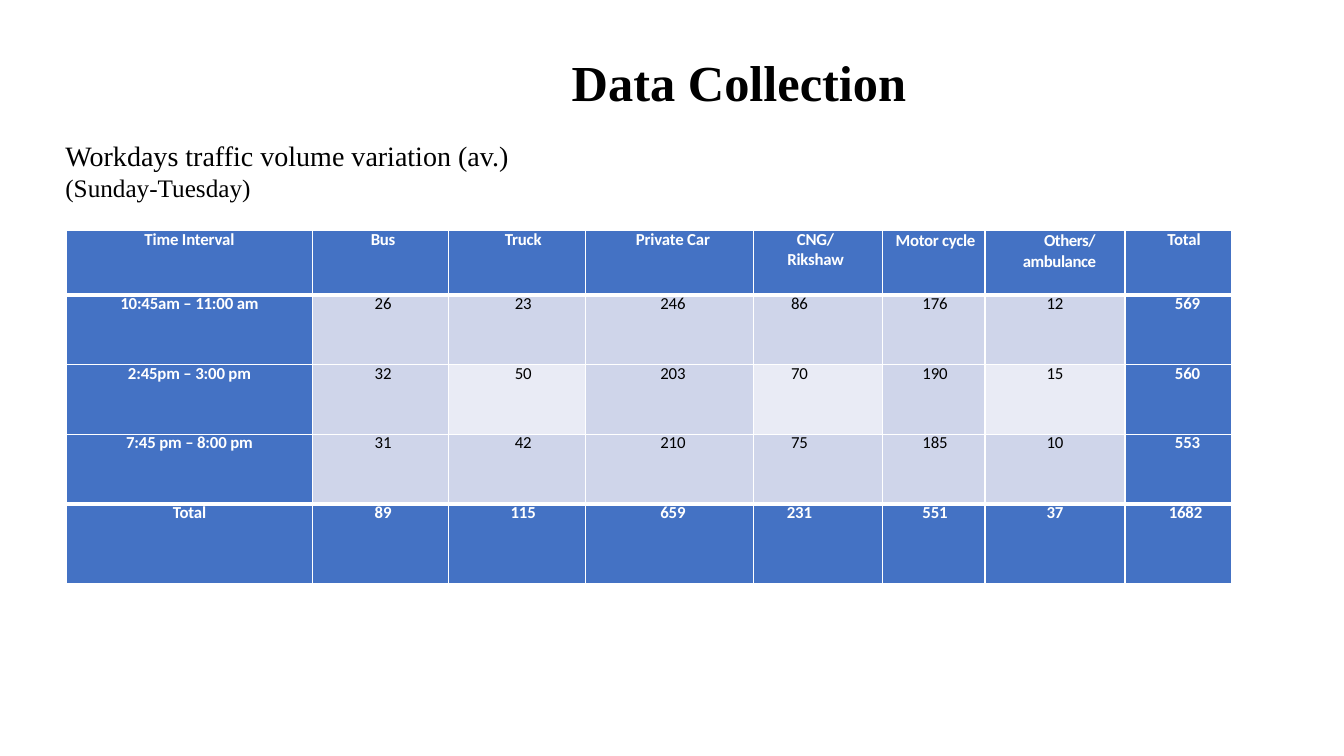
import pptx
import pptx.dml.color
import pptx.enum.text
import pptx.oxml
import pptx.oxml.ns
import pptx.util
from pptx.util import Inches

BLUE, PALE, PALER = "4472C4", "CFD5EA", "E9EBF5"
WHITE, BLACK = "FFFFFF", "000000"
SERIF, SANS = "Times New Roman", "Calibri"

COLUMNS = [2.44, 1.35, 1.36, 1.66, 1.28, 1.02, 1.39, 1.06]
ROWS = [0.64, 0.69, 0.69, 0.69, 0.79]
DATA = [
    ["Time Interval", "Bus", "Truck", "Private Car", "CNG/\nRikshaw",
     "Motor cycle", "Others/ ambulance", "Total"],
    ["10:45am – 11:00 am", "26", "23", "246", "86", "176", "12", "569"],
    ["2:45pm – 3:00 pm", "32", "50", "203", "70", "190", "15", "560"],
    ["7:45 pm – 8:00 pm", "31", "42", "210", "75", "185", "10", "553"],
    ["Total", "89", "115", "659", "231", "551", "37", "1682"],
]
HEADER_INDENTS = [(0, 0), (0.05, 0), (0.12, 0), (0.07, 0), (0.02, 0),
                  (0.17, -0.05), (0.09, 0.2), (0.11, 0)]
HEADER_RIGHT = [0, 0, 0, 0, 0.06, 0.08, 0, 0]
HEADER_TRACKING = [-10, -20, -10, -10, -15, -20, -30, -10]
BODY_INDENTS = [0, 0.05, 0.12, 0.07, 0, 0.03, 0, 0.18]
BODY_RIGHT = [0, 0, 0, 0, 0.36, 0, 0, 0]


def rgb(value):
    return pptx.dml.color.RGBColor.from_string(value)


class Deck:
    def __init__(self):
        self.prs = pptx.Presentation()
        self.prs.slide_width = Inches(13.33)
        self.prs.slide_height = Inches(7.5)
        self.slide = self.prs.slides.add_slide(self.prs.slide_layouts[5])

    def style(self, r, size, font, color, bold=False):
        r.font.size = pptx.util.Pt(size)
        r.font.name = font
        r.font.color.rgb = rgb(color)
        r.font.bold = bold

    def title(self, text, left, top, width, height):
        sp = self.slide.shapes.title
        sp.left, sp.top = Inches(left), Inches(top)
        sp.width, sp.height = Inches(width), Inches(height)
        tf = sp.text_frame
        tf.text = text
        tf.word_wrap = False
        tf.auto_size = pptx.enum.text.MSO_AUTO_SIZE.SHAPE_TO_FIT_TEXT
        tf.vertical_anchor = pptx.enum.text.MSO_ANCHOR.TOP
        p = tf.paragraphs[0]
        p.alignment = pptx.enum.text.PP_ALIGN.LEFT
        self.style(p.runs[0], 36, SERIF, BLACK, True)

    def text(self, parts, left, top, width, height):
        sp = self.slide.shapes.add_textbox(
            Inches(left), Inches(top), Inches(width), Inches(height))
        tf = sp.text_frame
        tf.word_wrap = True
        tf.auto_size = pptx.enum.text.MSO_AUTO_SIZE.SHAPE_TO_FIT_TEXT
        for text, size in parts:
            r = tf.paragraphs[0].add_run()
            r.text = text
            self.style(r, size, SERIF, BLACK)

    def borders(self, cell, top, bottom):
        tc_pr = cell._tc.get_or_add_tcPr()
        sides = [("lnL", 1), ("lnR", 1), ("lnT", top), ("lnB", bottom)]
        for i, (side, width) in enumerate(sides):
            line = pptx.oxml.parse_xml(
                f'<a:{side} {pptx.oxml.ns.nsdecls("a")} w="{width * 12700}">'
                f'<a:solidFill><a:srgbClr val="{WHITE}"/></a:solidFill></a:{side}>')
            tc_pr.insert(i, line)

    def cell(self, cell, text, fill, color, bold, indent, right, exact, tracking):
        cell.margin_left = cell.margin_top = cell.margin_bottom = 0
        cell.margin_right = Inches(right)
        cell.fill.solid()
        cell.fill.fore_color.rgb = rgb(fill)
        tf = cell.text_frame
        tf.text = text
        for i, p in enumerate(tf.paragraphs):
            p.alignment = pptx.enum.text.PP_ALIGN.CENTER
            if exact and i == 0:
                p.line_spacing = pptx.util.Pt(13.4)
            p_pr = p._p.get_or_add_pPr()
            p_pr.set("marL", str(Inches(indent[0])))
            p_pr.set("indent", str(Inches(indent[1])))
            for r in p.runs:
                self.style(r, 12, SANS, color, bold)
                r.font._element.set("spc", str(tracking))

    def table(self, left, top):
        frame = self.slide.shapes.add_table(
            len(ROWS), len(COLUMNS), Inches(left), Inches(top),
            Inches(sum(COLUMNS)), Inches(sum(ROWS)))
        table = frame.table
        table.first_row = table.horz_banding = False
        for column, width in zip(table.columns, COLUMNS):
            column.width = Inches(width)
        for row, height in zip(table.rows, ROWS):
            row.height = Inches(height)
        last_row, last_col = len(ROWS) - 1, len(COLUMNS) - 1
        for i, values in enumerate(DATA):
            for j, text in enumerate(values):
                strong = i in (0, last_row) or j in (0, last_col)
                indent, right, tracking = (BODY_INDENTS[j], 0), BODY_RIGHT[j], -10
                if i == 0:
                    indent, right = HEADER_INDENTS[j], HEADER_RIGHT[j]
                    tracking = HEADER_TRACKING[j]
                elif (i, j) == (last_row, last_col):
                    indent = (0.14, 0)
                if strong:
                    fill = BLUE
                else:
                    fill = PALER if i == 2 and j % 2 == 0 else PALE
                cell = table.cell(i, j)
                self.cell(cell, text, fill, WHITE if strong else BLACK, strong,
                          indent, right, i > 0 or j not in (5, 6), tracking)
                self.borders(cell, 3 if i in (1, last_row) else 1,
                             3 if i in (0, last_row - 1) else 1)


def main():
    deck = Deck()
    deck.table(0.66, 2.29)
    deck.text([("Workdays traffic volume variation (av.) ", 20),
               ("(Sunday-Tuesday)", 18)], 0.55, 1.33, 5.45, 0.74)
    deck.title("Data Collection", 5.57, 0.46, 3.55, 0.71)
    deck.prs.save("out.pptx")


if __name__ == "__main__":
    main()
